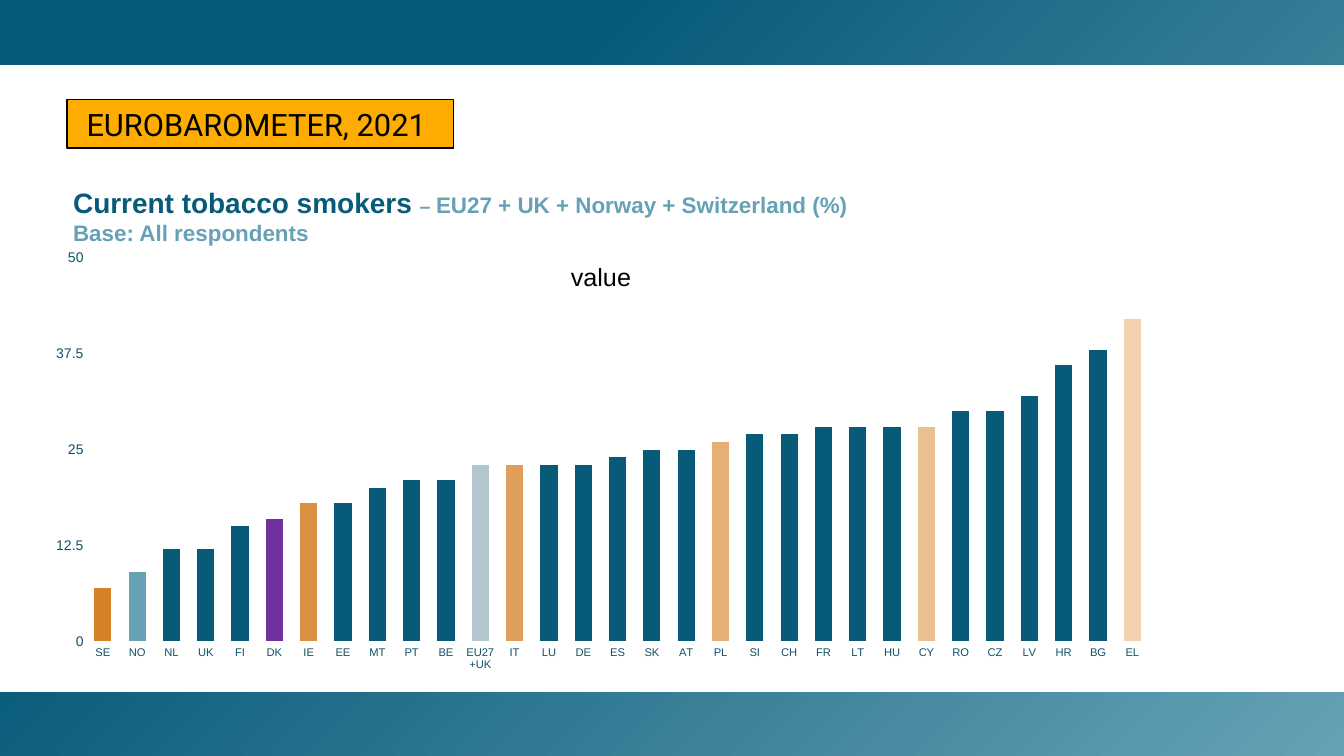
from dataclasses import dataclass

from lxml import etree
from pptx import Presentation
from pptx.chart.data import CategoryChartData
from pptx.dml.color import RGBColor
from pptx.enum.chart import XL_CHART_TYPE, XL_TICK_LABEL_POSITION, XL_TICK_MARK
from pptx.enum.shapes import MSO_SHAPE
from pptx.enum.text import MSO_ANCHOR, MSO_AUTO_SIZE, PP_ALIGN
from pptx.oxml.ns import qn
from pptx.util import Pt

RECT = MSO_SHAPE.RECTANGLE
COLUMN = XL_CHART_TYPE.COLUMN_CLUSTERED
LOW = XL_TICK_LABEL_POSITION.LOW
NO_TICK = XL_TICK_MARK.NONE
TOP, MIDDLE = MSO_ANCHOR.TOP, MSO_ANCHOR.MIDDLE
LEFT, CENTER = PP_ALIGN.LEFT, PP_ALIGN.CENTER
NO_FIT = MSO_AUTO_SIZE.NONE
PX = 9144
WIDE, HIGH = 2667, 1500


@dataclass(frozen=True)
class Theme:
    teal: str = "075B79"
    sky: str = "66A1B5"
    axis: str = "115168"
    amber: str = "FEAD00"
    white: str = "FFFFFF"
    black: str = "000000"
    sans: str = "Arial"
    label: str = "Roboto"
    tag: int = 44
    head: int = 40
    dash: int = 28
    sub: int = 32
    chart: int = 36
    value: int = 20
    country: int = 16


THEME = Theme()
ACCENTS = {
    "SE": "D48127", "NO": THEME.sky, "DK": "7030A0", "IE": "DA9040",
    "EU27+UK": "B3C5CE", "IT": "DF9F5A", "PL": "E5AF75", "CY": "EBC091",
    "EL": "F1D1AF",
}
SMOKERS = {
    "SE": 7, "NO": 9, "NL": 12, "UK": 12, "FI": 15, "DK": 16, "IE": 18,
    "EE": 18, "MT": 20, "PT": 21, "BE": 21, "EU27+UK": 23, "IT": 23,
    "LU": 23, "DE": 23, "ES": 24, "SK": 25, "AT": 25, "PL": 26, "SI": 27,
    "CH": 27, "FR": 28, "LT": 28, "HU": 28, "CY": 28, "RO": 30, "CZ": 30,
    "LV": 32, "HR": 36, "BG": 38, "EL": 42,
}


def scale(box):
    return [side * PX for side in box]


def style(font, size, color, face=THEME.sans, bold=False):
    font.size = Pt(size)
    font.name = face
    font.bold = bold
    font.color.rgb = RGBColor.from_string(color)


def paint(fill, color):
    fill.solid()
    fill.fore_color.rgb = RGBColor.from_string(color)


def add_rect(slide, box):
    shape = slide.shapes.add_shape(RECT, *scale(box))
    shape.shadow.inherit = False
    shape.line.fill.background()
    return shape


def add_frame(slide, box):
    left, top, width, height = box
    back = add_rect(slide, box)
    back.fill.gradient()
    back.fill.gradient_angle = 315
    stops = zip(back.fill.gradient_stops, (0.3, 1), (THEME.teal, THEME.sky))
    for stop, place, color in stops:
        stop.position = place
        stop.color.rgb = RGBColor.from_string(color)
    panel = add_rect(slide, (left, top + 129, width, height - 256))
    paint(panel.fill, THEME.white)


def add_tag(slide, box):
    tag = add_rect(slide, box)
    paint(tag.fill, THEME.amber)
    paint(tag.line.fill, THEME.black)
    tag.line.width = Pt(2)
    frame = tag.text_frame
    frame.word_wrap = False
    frame.vertical_anchor = MIDDLE
    frame.text = "EUROBAROMETER, 2021 "
    line = frame.paragraphs[0]
    line.alignment = CENTER
    style(line.runs[0].font, THEME.tag, THEME.black, THEME.label)


def add_head(slide, box):
    title = slide.shapes.title
    title.left, title.top, title.width, title.height = scale(box)
    slide.shapes._spTree.append(title._element)
    frame = title.text_frame
    frame.auto_size = NO_FIT
    frame.word_wrap = False
    frame.vertical_anchor = TOP
    frame.margin_left = frame.margin_right = 10 * PX
    frame.margin_top = frame.margin_bottom = 10 * PX
    frame.text = "Current tobacco smokers \nBase: All respondents"
    first, last = frame.paragraphs
    for text in ("– ", "EU27 + UK + Norway + Switzerland (%)"):
        first.add_run().text = text
    first.alignment = last.alignment = LEFT
    sizes = (THEME.head, THEME.dash, THEME.sub, THEME.sub)
    colors = (THEME.teal, THEME.sky, THEME.sky, THEME.sky)
    for run, size, color in zip(first.runs + last.runs, sizes, colors):
        style(run.font, size, color, bold=True)


def set_axis(axis, size):
    axis.has_major_gridlines = False
    axis.major_tick_mark = axis.minor_tick_mark = NO_TICK
    axis.format.line.fill.background()
    style(axis.tick_labels.font, size, THEME.axis)


def set_plot(chart, **sides):
    area = chart._chartSpace.find(".//" + qn("c:plotArea"))
    for old in area.findall(qn("c:layout")):
        area.remove(old)
    layout = etree.Element(qn("c:layout"))
    manual = etree.SubElement(layout, qn("c:manualLayout"))
    parts = {"layoutTarget": "inner", "xMode": "edge", "yMode": "edge", **sides}
    for name, value in parts.items():
        etree.SubElement(manual, qn("c:" + name)).set("val", str(value))
    area.insert(0, layout)


def add_bars(slide, box):
    data = CategoryChartData()
    data.categories = list(SMOKERS)
    data.add_series("value", list(SMOKERS.values()))
    chart = slide.shapes.add_chart(COLUMN, *scale(box), data).chart
    chart.has_legend = False
    chart.has_title = True
    frame = chart.chart_title.text_frame
    frame.text = "value"
    style(frame.paragraphs[0].runs[0].font, THEME.chart, THEME.black)
    chart._chartSpace.find(".//" + qn("c:title")).find(qn("c:overlay")).set("val", "1")
    set_plot(chart, x=0.035, y=0.029, w=0.96, h=0.91)
    set_axis(chart.category_axis, THEME.country)
    chart.category_axis.tick_label_position = LOW
    scale_axis = chart.value_axis
    set_axis(scale_axis, THEME.value)
    scale_axis.minimum_scale, scale_axis.maximum_scale = 0, 50
    scale_axis.major_unit = 12.5
    scale_axis.tick_labels.number_format = "General"
    scale_axis.tick_labels.number_format_is_linked = False
    plot = chart.plots[0]
    plot.gap_width = 100
    plot.vary_by_categories = False
    series = plot.series[0]
    paint(series.format.fill, THEME.teal)
    for index, country in enumerate(SMOKERS):
        if country in ACCENTS:
            paint(series.points[index].format.fill, ACCENTS[country])


def main():
    deck = Presentation()
    deck.slide_width, deck.slide_height = WIDE * PX, HIGH * PX
    slide = deck.slides.add_slide(deck.slide_layouts[5])
    add_frame(slide, (0, 0, WIDE, HIGH))
    add_bars(slide, (93, 488, 2199, 842))
    add_tag(slide, (133, 198, 767, 96))
    add_head(slide, (135, 358, 1559, 132))
    deck.save("out.pptx")


if __name__ == "__main__":
    main()
